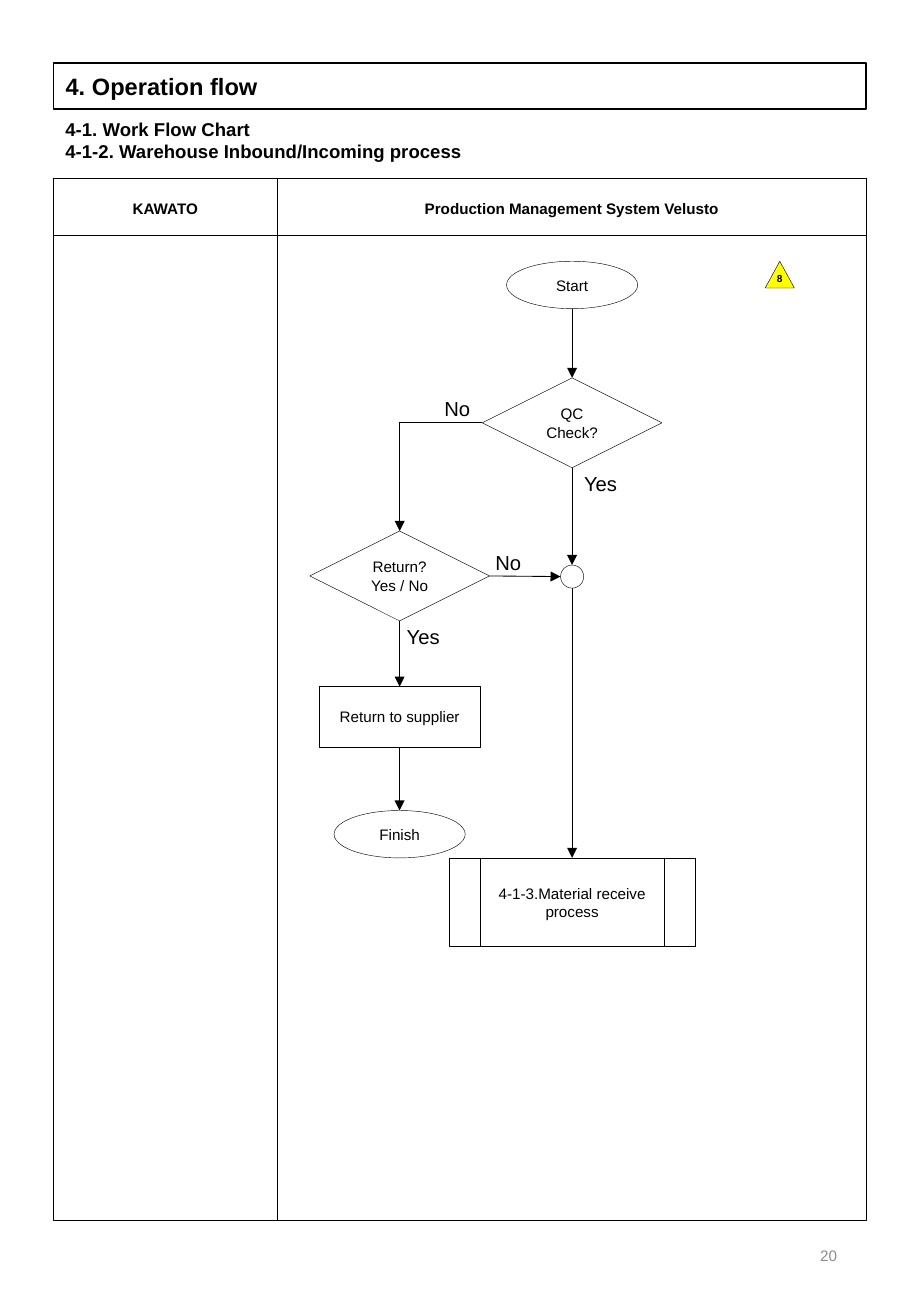
"""Build the warehouse inbound work flow slide."""
from lxml import etree
from pptx import Presentation
from pptx import util as u
from pptx.dml.color import RGBColor
from pptx.enum import shapes, text
from pptx.oxml.ns import qn

SCALE = u.Inches(1) // 100
FONT, BLACK, WHITE, YELLOW, GREY = "Arial", "000000", "FFFFFF", "FFFF00", "8C8C8C"
KIND, ALIGN, ANCHOR = shapes.MSO_SHAPE, text.PP_ALIGN, text.MSO_ANCHOR

SLIDE_SIZE = (750, 1083)
LEFT, WIDTH, DIVIDER = 44, 669, 228
HEADER_TOP, HEADER_HEIGHT, FLOW_HEIGHT = 147, 47, 857
TITLE = "4. Operation flow"
SUBTITLES = ["4-1. Work Flow Chart", "4-1-2. Warehouse Inbound/Incoming process"]
COLUMNS = [("KAWATO", LEFT, DIVIDER), ("Production Management System Velusto", DIVIDER, LEFT + WIDTH)]
PAGE_NUMBER = "20"

MAIN, SIDE = 471, 329
OVAL, DECISION = (108, 39), (148, 74)
NODES = {
    "start": (KIND.OVAL, MAIN, 215, OVAL, ["Start"]),
    "check": (KIND.FLOWCHART_DECISION, MAIN, 311, DECISION, ["QC Check?"]),
    "return": (KIND.FLOWCHART_DECISION, SIDE, 437, DECISION, ["Return?", "Yes / No"]),
    "junction": (KIND.OVAL, MAIN, 465, (19, 19), []),
    "supplier": (KIND.RECTANGLE, SIDE, 565, (132, 50), ["Return to supplier"]),
    "finish": (KIND.OVAL, SIDE, 667, OVAL, ["Finish"]),
    "receive": (KIND.FLOWCHART_PREDEFINED_PROCESS, MAIN, 706, (202, 73),
                ["4-1-3.Material receive", "process"]),
}
DOWN_ARROWS = [("start", "check"), ("check", "junction"), ("junction", "receive"),
               ("return", "supplier"), ("supplier", "finish")]
BRANCH_LABELS = [("No", 356, 321), ("Yes", 471, 383), ("No", 398, 448), ("Yes", 325, 509)]
MARKER = ("8", (630, 215, 24, 22))


def px(*lengths):
    return [u.Emu(int(length * SCALE)) for length in lengths]


def color(value):
    return RGBColor.from_string(value)


def write(shape, lines, size, bold=False, align=ALIGN.CENTER, anchor=ANCHOR.MIDDLE,
          wrap=True, ink=BLACK):
    frame = shape.text_frame
    frame.word_wrap, frame.vertical_anchor = wrap, anchor
    frame.auto_size = text.MSO_AUTO_SIZE.NONE
    for index, line in enumerate(lines):
        paragraph = frame.add_paragraph() if index else frame.paragraphs[0]
        paragraph.alignment = align
        run = paragraph.add_run()
        run.text = line
        run.font.name, run.font.size, run.font.bold = FONT, u.Pt(size), bold
        run.font.color.rgb = color(ink)


def add_text(slide, box, lines, size, **style):
    write(slide.shapes.add_textbox(*px(*box)), lines, size, **style)


def outline(shape, width):
    shape.line.color.rgb, shape.line.width = color(BLACK), u.Pt(width)


def add_box(slide, kind, box, fill=None):
    shape = slide.shapes.add_shape(kind, *px(*box))
    shape.shadow.inherit = False
    if fill:
        shape.fill.solid()
        shape.fill.fore_color.rgb = color(fill)
    else:
        shape.fill.background()
    outline(shape, 0.25)
    return shape


def add_line(slide, start, end, arrow=True, bent=False):
    kind = shapes.MSO_CONNECTOR.ELBOW if bent else shapes.MSO_CONNECTOR.STRAIGHT
    connector = slide.shapes.add_connector(kind, *px(*start, *end))
    outline(connector, 0.5)
    properties = connector.element.spPr
    if bent:
        properties.find(qn("a:prstGeom")).set("prst", "bentConnector2")
    if arrow:
        etree.SubElement(properties.find(qn("a:ln")), qn("a:tailEnd"), type="triangle")
    etree.SubElement(properties, qn("a:effectLst"))


def port(name, side):
    _, center, top, (width, height), _ = NODES[name]
    across, down = {"top": (0, 0), "bottom": (0, 1), "left": (-0.5, 0.5), "right": (0.5, 0.5)}[side]
    return center + across * width, top + down * height


def add_frame(slide):
    title = slide.shapes.title
    title.left, title.top, title.width, title.height = px(LEFT, 52, WIDTH, 38)
    outline(title, 1)
    write(title, [TITLE], 14, bold=True, align=ALIGN.LEFT)
    add_text(slide, (LEFT, 92, WIDTH, 47), SUBTITLES, 11, bold=True,
             align=ALIGN.LEFT, anchor=ANCHOR.TOP)
    for height in (FLOW_HEIGHT, HEADER_HEIGHT):
        add_box(slide, KIND.RECTANGLE, (LEFT, HEADER_TOP, WIDTH, height))
    add_line(slide, (DIVIDER, HEADER_TOP), (DIVIDER, HEADER_TOP + FLOW_HEIGHT), arrow=False)
    for label, left, right in COLUMNS:
        add_text(slide, (left, HEADER_TOP + 1, right - left, HEADER_HEIGHT), [label], 9, bold=True)
    add_text(slide, (530, 1004, 169, 58), [PAGE_NUMBER], 9, align=ALIGN.RIGHT, ink=GREY)


def add_flow(slide):
    for source, target in DOWN_ARROWS:
        add_line(slide, port(source, "bottom"), port(target, "top"))
    add_line(slide, port("return", "right"), port("junction", "left"))
    add_line(slide, port("check", "left"), port("return", "top"), bent=True)
    for kind, center, top, (width, height), lines in NODES.values():
        node = add_box(slide, kind, (center - width / 2, top, width, height), WHITE)
        write(node, lines, 9)
    for label, left, top in BRANCH_LABELS:
        add_text(slide, (left, top, 48, 30), [label], 12, align=ALIGN.LEFT,
                 anchor=ANCHOR.TOP, wrap=False)
    label, box = MARKER
    marker = add_box(slide, KIND.ISOSCELES_TRIANGLE, box, YELLOW)
    write(marker, [label], 6, bold=True)
    marker.text_frame.margin_top, marker.text_frame.margin_bottom = px(0, 5)


def main():
    presentation = Presentation()
    presentation.slide_width, presentation.slide_height = px(*SLIDE_SIZE)
    slide = presentation.slides.add_slide(presentation.slide_layouts[5])
    add_frame(slide)
    add_flow(slide)
    presentation.save("out.pptx")


if __name__ == "__main__":
    main()
